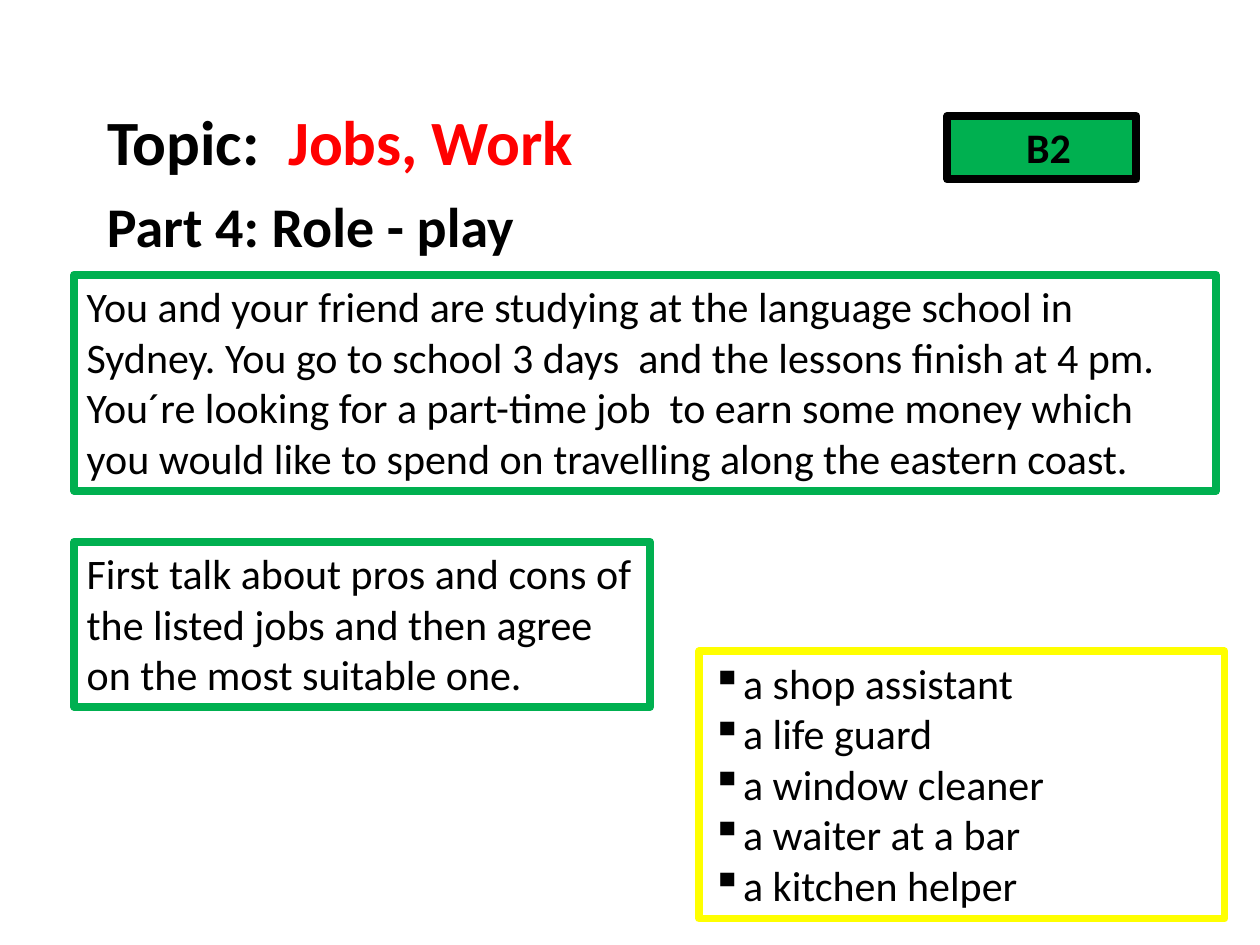
from lxml.etree import SubElement
from pptx import Presentation
from pptx.dml.color import RGBColor
from pptx.enum.shapes import MSO_SHAPE
from pptx.enum.text import MSO_ANCHOR, MSO_AUTO_SIZE, PP_ALIGN
from pptx.oxml.ns import qn
from pptx.util import Pt

COLORS = {
    "black": "000000",
    "red": "FF0000",
    "green": "00B050",
    "yellow": "FFFF00",
}
SITUATION = (
    "You and your friend are studying at the language school in Sydney. "
    "You go to school 3 days  and the lessons finish at 4 pm. "
    "You´re looking for a part-time job  to earn some money which "
    "you would like to spend on travelling along the eastern coast."
)
TASK = (
    "First talk about pros and cons of the listed jobs "
    "and then agree on the most suitable one."
)
JOBS = [
    "a shop assistant",
    "a life guard",
    "a window cleaner",
    "a waiter at a bar",
    "a kitchen helper",
]


class RolePlayCard:
    font_name = "Calibri"
    body_size = 24
    border_width = 4.5
    bullet_indent = 18

    def __init__(self, slide):
        self.slide = slide

    def color(self, name):
        return RGBColor.from_string(COLORS[name])

    def style_frame(self, frame, wrap=True):
        frame.word_wrap = wrap
        frame.auto_size = MSO_AUTO_SIZE.SHAPE_TO_FIT_TEXT
        frame.vertical_anchor = MSO_ANCHOR.TOP

    def style_paragraph(self, paragraph, size, bold=False):
        paragraph.alignment = PP_ALIGN.LEFT
        paragraph.font.name = self.font_name
        paragraph.font.size = Pt(size)
        paragraph.font.bold = bold
        paragraph.font.color.rgb = self.color("black")

    def title(self, label, topic, left, top, width, height):
        heading = self.slide.shapes.title
        heading.left, heading.top = Pt(left), Pt(top)
        heading.width, heading.height = Pt(width), Pt(height)
        self.style_frame(heading.text_frame)
        paragraph = heading.text_frame.paragraphs[0]
        paragraph.add_run().text = label
        topic_run = paragraph.add_run()
        topic_run.text = topic
        self.style_paragraph(paragraph, 36, bold=True)
        topic_run.font.color.rgb = self.color("red")

    def subtitle(self, text, left, top, width, height):
        part = self.slide.shapes.add_textbox(Pt(left), Pt(top), Pt(width), Pt(height))
        self.style_frame(part.text_frame, wrap=False)
        part.text_frame.text = text
        self.style_paragraph(part.text_frame.paragraphs[0], 32, bold=True)

    def box(self, lines, border, left, top, width, height,
            fill=None, bold=False, bulleted=False, inset=7.2):
        panel = self.slide.shapes.add_shape(
            MSO_SHAPE.RECTANGLE, Pt(left), Pt(top), Pt(width), Pt(height))
        panel.shadow.inherit = False
        if fill:
            panel.fill.solid()
            panel.fill.fore_color.rgb = self.color(fill)
        else:
            panel.fill.background()
        panel.line.color.rgb = self.color(border)
        panel.line.width = Pt(self.border_width)
        frame = panel.text_frame
        self.style_frame(frame)
        frame.margin_left = Pt(inset)
        frame.text = "\n".join(lines)
        for paragraph in frame.paragraphs:
            if bulleted:
                self.bullet(paragraph)
            self.style_paragraph(paragraph, self.body_size, bold)

    def bullet(self, paragraph):
        properties = paragraph._p.get_or_add_pPr()
        properties.set("marL", str(Pt(self.bullet_indent)))
        properties.set("indent", str(-Pt(self.bullet_indent)))
        SubElement(properties, qn("a:buChar")).set("char", "▪")


def main():
    presentation = Presentation()
    presentation.slide_width, presentation.slide_height = Pt(720), Pt(540)
    title_only = presentation.slide_layouts[5]
    card = RolePlayCard(presentation.slides.add_slide(title_only))

    card.title("Topic:  ", "Jobs, Work", 54, 54.7, 368.6, 51)
    card.subtitle("Part 4: Role - play", 54, 105.8, 294.5, 46)
    card.box(["B2"], "black", 541.4, 66.2, 108, 36.4,
             fill="green", bold=True, inset=45)
    card.box([SITUATION], "green", 42.5, 157, 652.3, 123.6)
    card.box([TASK], "green", 42.5, 309.6, 329, 94.5)
    card.box(JOBS, "yellow", 399.6, 372.2, 300.2, 152.7, bulleted=True)

    presentation.save("out.pptx")


if __name__ == "__main__":
    main()
